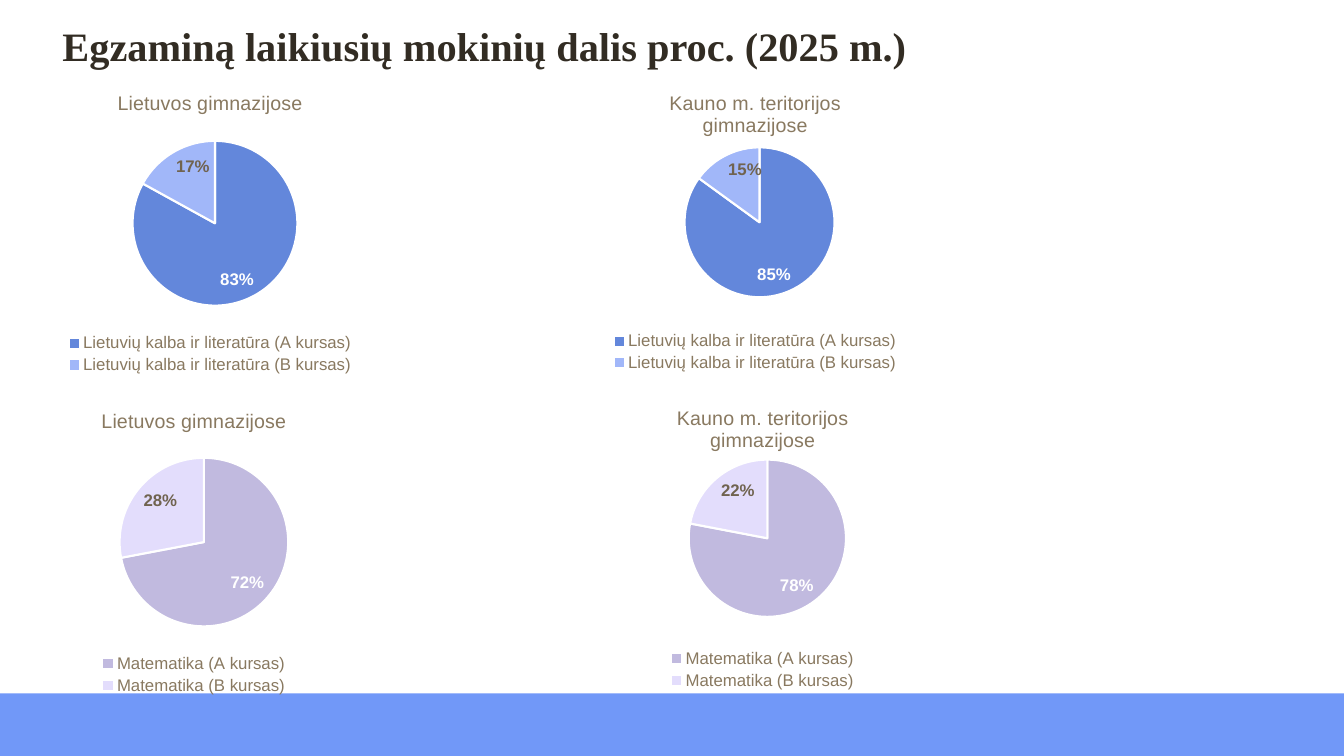
from lxml.etree import SubElement
from pptx import Presentation
from pptx.chart.data import CategoryChartData
from pptx.dml.color import RGBColor
from pptx.enum.chart import XL_CHART_TYPE as ChartType
from pptx.enum.chart import XL_LABEL_POSITION as LabelPosition
from pptx.enum.chart import XL_LEGEND_POSITION as LegendPosition
from pptx.enum.shapes import MSO_SHAPE as Shape
from pptx.oxml.ns import qn
from pptx.util import Inches, Pt

WHITE, DARK, BROWN, LABEL_BROWN = "FFFFFF", "322C23", "897960", "70634F"
BLUES = ("6387DB", "A1B7F9")
VIOLETS = ("C1BADF", "E3DDFC")
LANGUAGE = "Lietuvių kalba ir literatūra"
MATHS = "Matematika"
COUNTRY = "Lietuvos gimnazijose"
CITY = "Kauno m. teritorijos gimnazijose"
USUAL_PLOT = (0.274, 0.216, 0.48, 0.545)
NARROW_PLOT = (0.217, 0.212, 0.641, 0.552)

# subject, schools, percentages, slice colours, chart box, inner plot area
PIES = [
    (LANGUAGE, COUNTRY, (83, 17), BLUES, (0.38, 0.75, 3.41, 3), USUAL_PLOT),
    (MATHS, COUNTRY, (72, 28), VIOLETS, (0.62, 3.9, 2.61, 3.03), NARROW_PLOT),
    (LANGUAGE, CITY, (85, 15), BLUES, (5.94, 0.75, 3.1, 2.98), USUAL_PLOT),
    (MATHS, CITY, (78, 22), VIOLETS, (5.94, 3.87, 3.25, 3.01), USUAL_PLOT),
]


def rgb(value):
    return RGBColor.from_string(value)


def set_font(font, size, color, bold=False, name="Arial"):
    font.name, font.size, font.bold = name, Pt(size), bold
    font.color.rgb = rgb(color)


def place_plot(chart, box):
    """Fix the inner plot area as fractions of the chart."""
    plot_area = chart._chartSpace.chart.plotArea
    for old in plot_area.findall(qn("c:layout")):
        plot_area.remove(old)
    layout = SubElement(plot_area, qn("c:layout"))
    plot_area.insert(0, layout)
    manual = SubElement(layout, qn("c:manualLayout"))
    settings = [("layoutTarget", "inner"), ("xMode", "edge"), ("yMode", "edge")]
    for tag, value in settings + list(zip("xywh", box)):
        SubElement(manual, qn(f"c:{tag}")).set("val", str(value))


class ExamSlide:
    """Holds the slide and draws its elements in the shared style."""

    def __init__(self, presentation):
        self.slide = presentation.slides.add_slide(presentation.slide_layouts[6])

    def band(self, box, color):
        band = self.slide.shapes.add_shape(Shape.RECTANGLE, *map(Inches, box))
        band.shadow.inherit = False
        band.fill.solid()
        band.fill.fore_color.rgb = rgb(color)
        band.line.fill.background()

    def heading(self, box, text):
        frame = self.slide.shapes.add_textbox(*map(Inches, box)).text_frame
        frame.word_wrap = True
        frame.margin_left = frame.margin_right = 0
        frame.margin_top = frame.margin_bottom = 0
        paragraph = frame.paragraphs[0]
        paragraph.text = text
        paragraph.line_spacing = 0.9
        set_font(paragraph.font, 28.8, DARK, True, "Times New Roman")

    def pie(self, subject, schools, shares, colors, box, plot_box):
        data = CategoryChartData()
        data.categories = [f"{subject} ({course} kursas)" for course in "AB"]
        data.add_series(schools, shares)
        chart = self.slide.shapes.add_chart(
            ChartType.PIE, *map(Inches, box), data).chart
        set_font(chart.font, 10, DARK)

        chart.has_title = True
        title = chart.chart_title.text_frame.paragraphs[0]
        title.text = schools
        set_font(title.font, 14, BROWN)

        chart.has_legend = True
        chart.legend.position = LegendPosition.BOTTOM
        chart.legend.include_in_layout = False
        set_font(chart.legend.font, 12, BROWN)

        place_plot(chart, plot_box)
        chart.plots[0].vary_by_categories = True
        self.style_slices(chart.plots[0].series[0], colors)

    def style_slices(self, series, colors):
        labels = series.data_labels
        labels.show_value = False
        labels.show_percentage = True
        labels.position = LabelPosition.INSIDE_END
        set_font(labels.font, 12, LABEL_BROWN, True)
        for index, color in enumerate(colors):
            course = series.points[index]
            course.format.fill.solid()
            course.format.fill.fore_color.rgb = rgb(color)
            course.format.line.color.rgb = rgb(WHITE)
            course.format.line.width = Pt(1.5)

        course_a = series.points[0].data_label
        set_font(course_a.font, 12, WHITE, True)
        course_a.position = LabelPosition.INSIDE_END
        for label in series._element.iter(qn("c:dLbl")):
            label.find(qn("c:showVal")).set("val", "0")
            label.find(qn("c:showPercent")).set("val", "1")


def main():
    presentation = Presentation()
    presentation.slide_width = Inches(13.33)
    presentation.slide_height = Inches(7.5)
    exam = ExamSlide(presentation)
    exam.band((0, 6.88, 13.33, 0.62), "7198F8")
    exam.heading((0.62, 0.26, 9, 0.69),
                 "Egzaminą laikiusių mokinių dalis proc. (2025 m.)")
    for pie in PIES:
        exam.pie(*pie)
    presentation.save("out.pptx")


if __name__ == "__main__":
    main()
